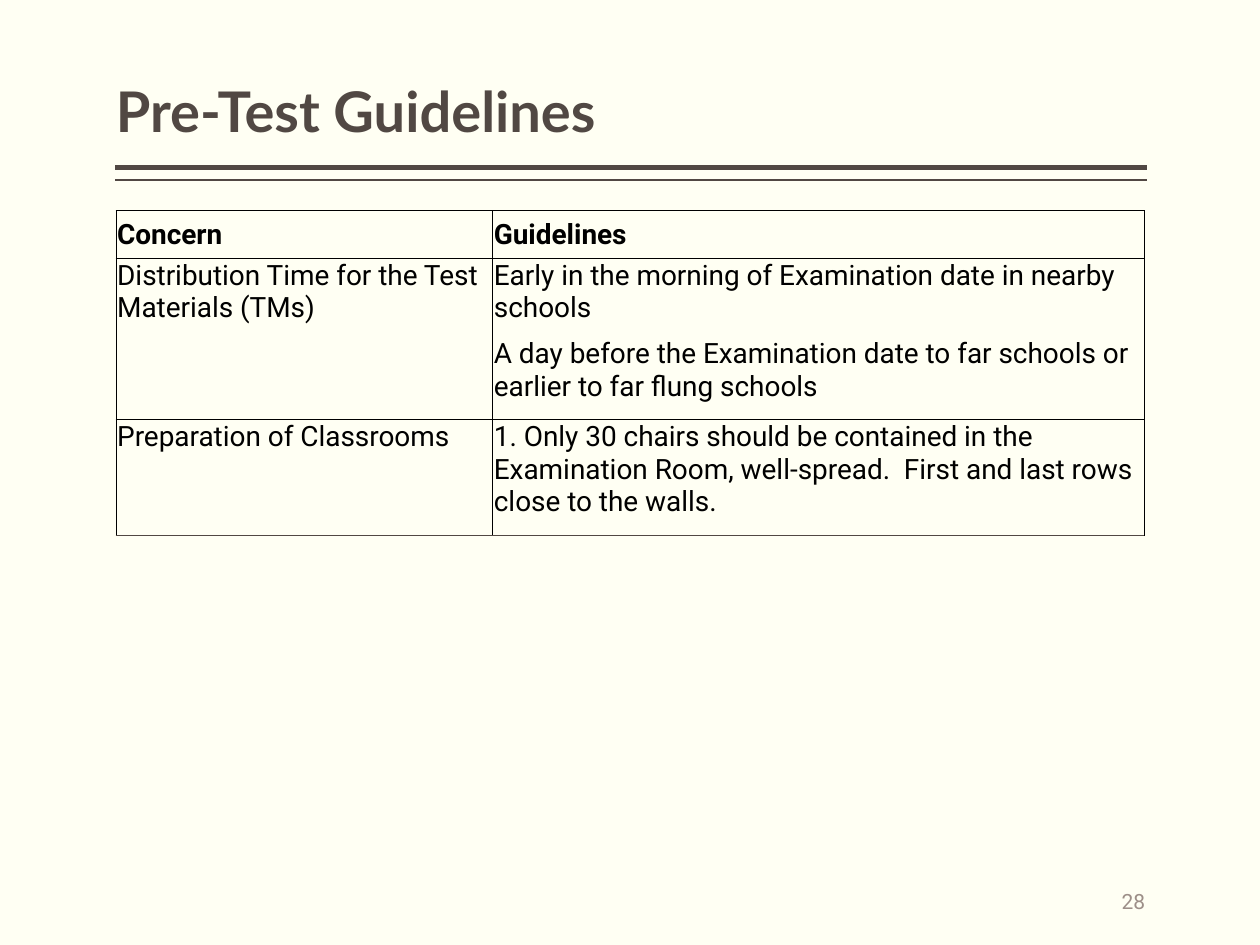
from pptx import Presentation
from pptx import util as u
from pptx.dml.color import RGBColor
from pptx.enum import shapes, text
from pptx.oxml.ns import qn
from lxml import etree

BROWN, BLACK = "514843", "000000"
COLS = (2.99, 5.17)
ROWS = (
    (0.38, "Concern", "Guidelines"),
    (0.62, "Distribution Time for the Test Materials (TMs)",
     "Early in the morning of Examination date in nearby schools"),
    (0.66, "", "A day before the Examination date to far schools or "
     "earlier to far flung schools"),
    (0.92, "Preparation of Classrooms",
     "1. Only 30 chairs should be contained in the Examination Room, "
     "well-spread.  First and last rows close to the walls."),
)


def paint(part, color):
    """Give a fill or line a solid colour."""
    part.solid()
    part.fore_color.rgb = RGBColor.from_string(color)


def write(frame, words, color, **font):
    """Put one styled paragraph in a text frame and return it."""
    para = frame.paragraphs[0]
    run = para.add_run()
    run.text = words
    for name, value in font.items():
        setattr(run.font, name, value)
    paint(run.font.fill, color)
    return para


def label(slide, box, words, color, anchor, form, **font):
    """Add a text box with flush sides."""
    frame = slide.shapes.add_textbox(*map(u.Inches, box)).text_frame
    frame.word_wrap = True
    frame.margin_left = frame.margin_right = 0
    frame.vertical_anchor = anchor
    para = write(frame, words, color, **font)
    for name, value in form.items():
        setattr(para, name, value)


def rule(slide, y, width):
    """Draw a horizontal rule under the title."""
    ends = map(u.Inches, (9.1, y, 0.91, y))
    line = slide.shapes.add_connector(shapes.MSO_CONNECTOR.STRAIGHT, *ends)
    line.line.width = u.Pt(width)
    paint(line.line.fill, BROWN)
    etree.SubElement(line._element.spPr, qn("a:effectLst"))


def edge(cell, side, color, width):
    """Draw one cell border, or clear it when there is no colour."""
    props = cell._tc.get_or_add_tcPr()
    line = etree.SubElement(props, qn("a:ln" + side), w=str(u.Pt(width)))
    if color:
        fill = etree.SubElement(line, qn("a:solidFill"))
        etree.SubElement(fill, qn("a:srgbClr"), val=color)
    else:
        etree.SubElement(line, qn("a:noFill"))


def fill_cell(cell, words, row):
    """Write a cell and draw its borders; rows 1 and 2 read as one."""
    thin, none = (BLACK, 0.5), (None, 0.5)
    sides = {"L": thin, "R": thin,
             "T": none if row == 2 else thin,
             "B": {1: none, 3: (BROWN, 1)}.get(row, thin)}
    for side, pen in sides.items():
        edge(cell, side, *pen)
    cell.fill.background()
    for name, size in dict(left=0.01, top=0.01, right=0.01, bottom=0).items():
        setattr(cell, "margin_" + name, u.Inches(size))
    if row == 0:
        cell.vertical_anchor = text.MSO_ANCHOR.MIDDLE
    if words:
        write(cell.text_frame, words, BLACK, name="Roboto",
              size=u.Pt(16), bold=row == 0)


def grid(slide):
    """Add the table of guidelines."""
    high = sum(row[0] for row in ROWS)
    box = map(u.Inches, (0.92, 1.67, sum(COLS), high))
    table = slide.shapes.add_table(len(ROWS), len(COLS), *box).table
    table.first_row = table.horz_banding = False
    for col, width in zip(table.columns, COLS):
        col.width = u.Inches(width)
    for r, (height, *cells) in enumerate(ROWS):
        table.rows[r].height = u.Inches(height)
        for c, words in enumerate(cells):
            fill_cell(table.cell(r, c), words, r)


def main():
    """Build the slide and save it."""
    deck = Presentation()
    deck.slide_width, deck.slide_height = u.Inches(10), u.Inches(7.5)
    slide = deck.slides.add_slide(deck.slide_layouts[6])
    paint(slide.background.fill, "FFFFF3")
    rule(slide, 1.33, 3)
    rule(slide, 1.43, 1)
    label(slide, (0.92, 0.33, 8.5, 0.87), "Pre-Test Guidelines", BROWN,
          text.MSO_ANCHOR.BOTTOM, {"line_spacing": 0.9},
          name="Lato", size=u.Pt(32), bold=True)
    label(slide, (7.59, 6.95, 1.5, 0.4), "28", "9D8F88",
          text.MSO_ANCHOR.MIDDLE, {"alignment": text.PP_ALIGN.RIGHT},
          name="Roboto", size=u.Pt(12))
    grid(slide)
    deck.save("out.pptx")


if __name__ == "__main__":
    main()
